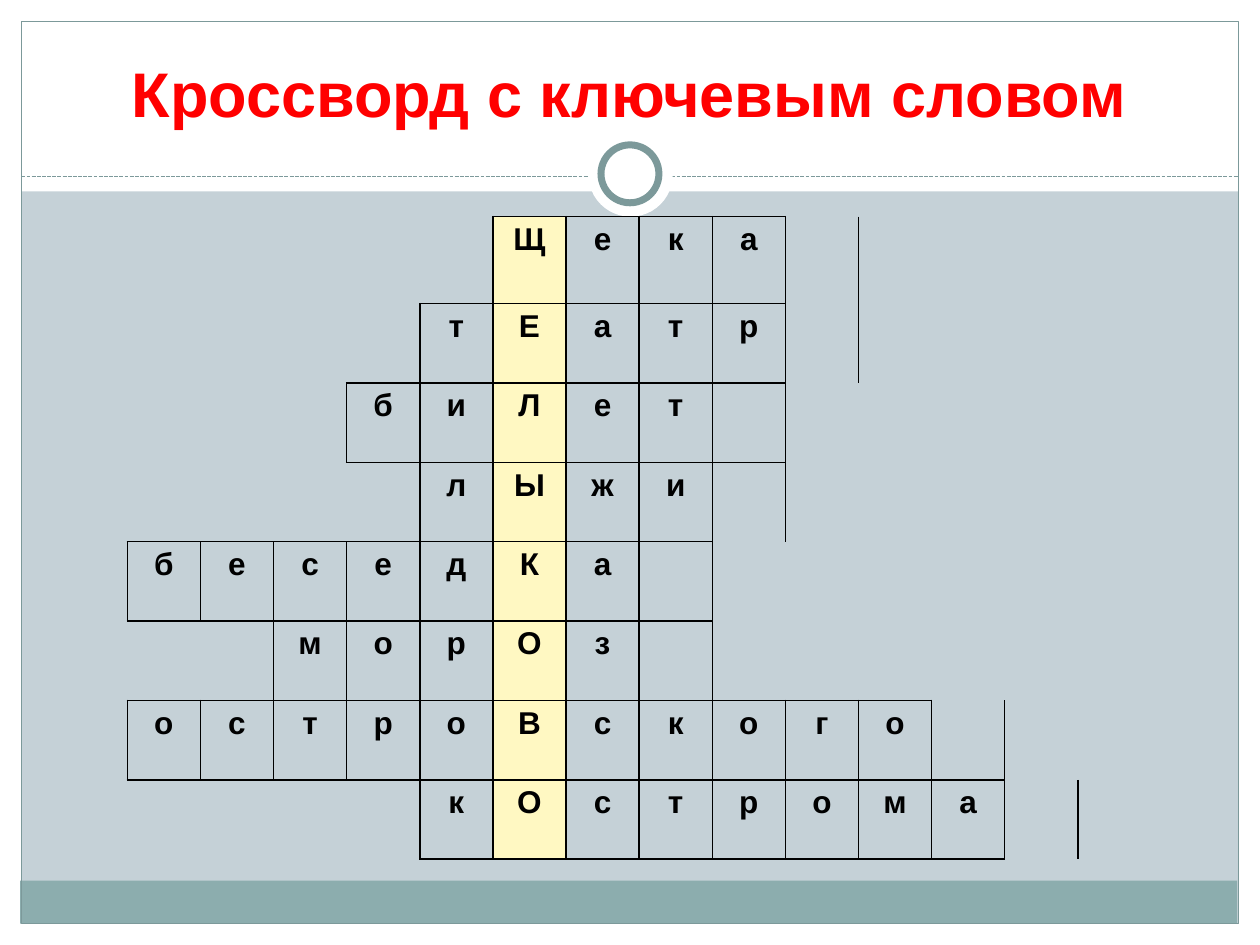
from lxml import etree
from pptx import Presentation, util as u
from pptx.dml.color import RGBColor
from pptx.enum import dml, shapes, text
from pptx.oxml import ns

WHITE, PALE, TEAL, BAND = "FFFFFF", "C5D1D7", "7C999A", "8CADAE"
KEY, BLACK, RED = "FFF8C2", "000000", "FF0000"
NO_STYLE = "{2D5ABB26-0587-4C30-8999-92F81FD0307C}"

# The capital letter of each word belongs to the key column
WORDS = ["Щека", "тЕатр", "биЛет", "лЫжи", "беседКа", "морОз",
         "остроВского", "кОстрома"]
KEY_COL, COLS = 6, 16


def rgb(value):
    return RGBColor.from_string(value)


class Deck:
    font = "Arial"

    def __init__(self, prs):
        self.s = prs.slides.add_slide(prs.slide_layouts[6])
        self.s.background.fill.solid()
        self.s.background.fill.fore_color.rgb = rgb(PALE)

    def shape(self, kind, x, y, w, h, fill=None, line=None, width=0.75):
        sp = self.s.shapes.add_shape(kind, *map(u.Inches, (x, y, w, h)))
        sp.shadow.inherit = False
        if fill:
            sp.fill.solid()
            sp.fill.fore_color.rgb = rgb(fill)
        else:
            sp.fill.background()
        if line:
            sp.line.color.rgb = rgb(line)
            sp.line.width = u.Pt(width)
        else:
            sp.line.fill.background()

    def dashed_line(self, x1, y1, x2, y2, color):
        c = self.s.shapes.add_connector(
            shapes.MSO_CONNECTOR.STRAIGHT, *map(u.Inches, (x1, y1, x2, y2)))
        c.line.color.rgb = rgb(color)
        c.line.width = u.Pt(0.75)
        c.line.dash_style = dml.MSO_LINE.SQUARE_DOT
        etree.SubElement(c._element.spPr, ns.qn("a:effectLst"))

    def add_text(self, tf, content, size, color):
        p = tf.paragraphs[0]
        p.alignment = text.PP_ALIGN.CENTER
        r = p.add_run()
        r.text = content
        r.font.name, r.font.size, r.font.bold = self.font, u.Pt(size), True
        r.font.color.rgb = rgb(color)
        return p

    def title(self, x, y, w, h, content):
        tf = self.s.shapes.add_textbox(*map(u.Inches, (x, y, w, h))).text_frame
        tf.word_wrap = True
        tf.vertical_anchor = text.MSO_ANCHOR.BOTTOM
        self.add_text(tf, content, 36, RED)

    def borders(self, cell, sides):
        tc_pr = cell._tc.get_or_add_tcPr()
        for i, side in enumerate(sides):
            ln = etree.Element(ns.qn("a:ln" + side), w=str(u.Pt(1)))
            fill = etree.SubElement(ln, ns.qn("a:solidFill"))
            etree.SubElement(fill, ns.qn("a:srgbClr"), val=BLACK)
            tc_pr.insert(i, ln)

    def crossword(self, x, y, w, heights):
        table = self.s.shapes.add_table(
            len(WORDS), COLS, *map(u.Inches, (x, y, w, sum(heights)))).table
        table.first_row = table.horz_banding = False
        table._tbl.tblPr.find(ns.qn("a:tableStyleId")).text = NO_STYLE
        for column in table.columns:
            column.width = u.Inches(w / COLS)

        # Shift each word so that its capital falls in the key column
        letters = {}
        for row, word in enumerate(WORDS):
            key = next(i for i, ch in enumerate(word) if ch.isupper())
            for i, ch in enumerate(word):
                letters[row, KEY_COL - key + i] = ch

        for row, height in enumerate(heights):
            table.rows[row].height = u.Inches(height)
            for col in range(COLS):
                cell = table.cell(row, col)
                here = (row, col) in letters
                cell.fill.solid()
                cell.fill.fore_color.rgb = rgb(KEY if col == KEY_COL else PALE)
                neighbours = {"L": (row, col - 1), "R": (row, col + 1),
                              "T": (row - 1, col), "B": (row + 1, col)}
                self.borders(cell, [side for side, pos in neighbours.items()
                                    if here or pos in letters])
                if here:
                    cell.margin_left = cell.margin_right = u.Inches(0.07)
                    cell.margin_top = cell.margin_bottom = 0
                    p = self.add_text(cell.text_frame, letters[row, col], 18, BLACK)
                    p.line_spacing = 1.15


def main():
    prs = Presentation()
    prs.slide_width, prs.slide_height = u.Inches(10), u.Inches(7.5)
    deck = Deck(prs)
    rect, oval = shapes.MSO_SHAPE.RECTANGLE, shapes.MSO_SHAPE.OVAL

    # White margins and header
    for box in [(0, 7.33, 10, 0.17), (0, 0, 10, 1.52),
                (0, 0, 0.17, 7.5), (9.83, 0, 0.17, 7.5)]:
        deck.shape(rect, *box, fill=WHITE)

    # Footer band, frame and divider with ring
    deck.shape(rect, 0.16, 6.99, 9.66, 0.34, fill=BAND)
    deck.shape(rect, 0.17, 0.17, 9.66, 7.16, line=TEAL)
    deck.dashed_line(0.17, 1.4, 9.83, 1.4, TEAL)
    deck.shape(oval, 4.67, 1.05, 0.67, 0.67, fill=WHITE)
    deck.shape(oval, 4.77, 1.15, 0.46, 0.46, fill=WHITE, line=TEAL, width=4)

    # Title and crossword
    deck.title(0.33, 0.25, 9.33, 0.83, "Кроссворд с ключевым словом")
    deck.crossword(0.43, 1.72, 9.29, [0.69] + [0.63] * 7)

    prs.save("out.pptx")


if __name__ == "__main__":
    main()
